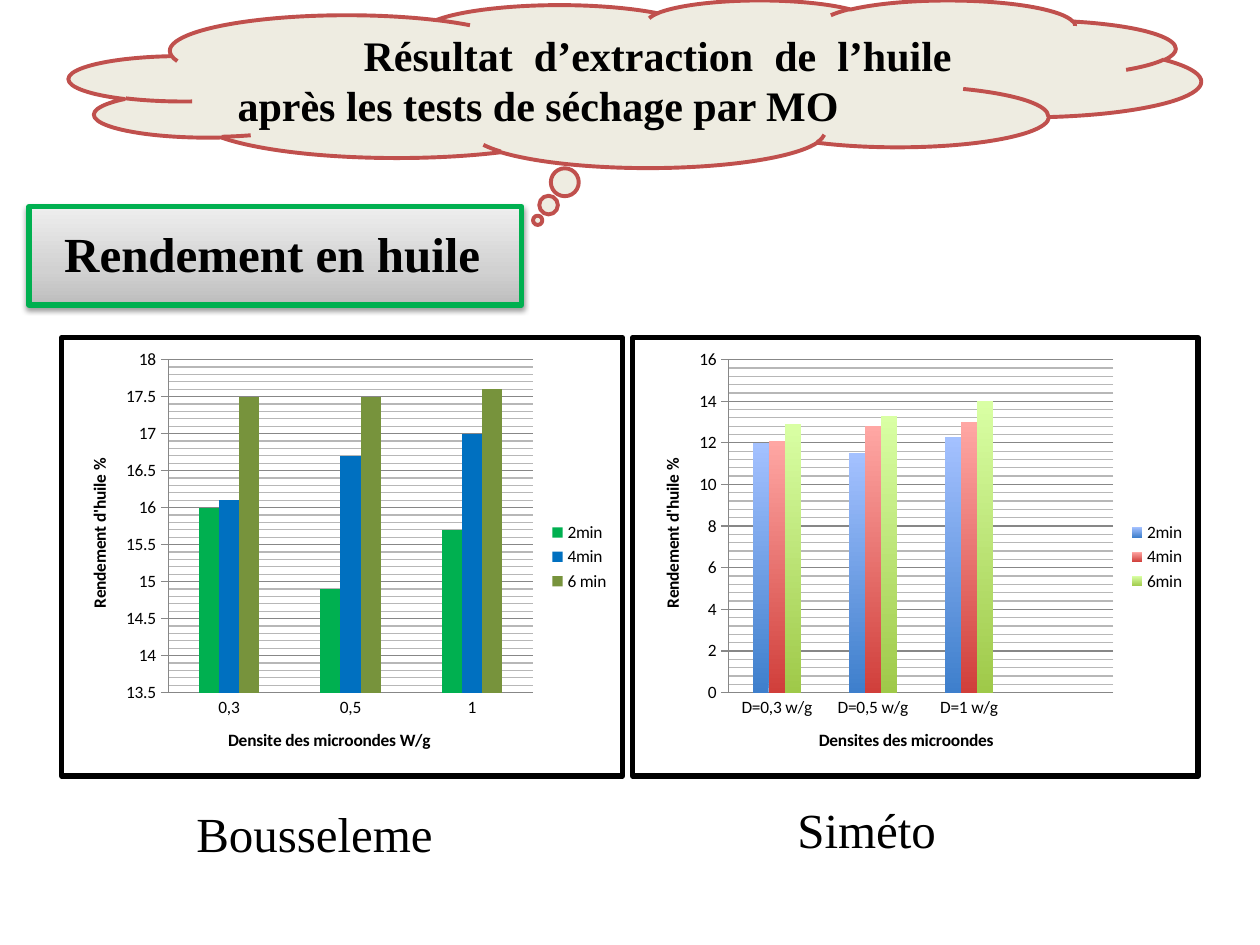
from lxml.etree import SubElement
from pptx import Presentation
from pptx.chart.data import CategoryChartData
from pptx.dml.color import RGBColor
from pptx.enum.chart import XL_CHART_TYPE, XL_LEGEND_POSITION, XL_TICK_MARK
from pptx.enum.shapes import MSO_SHAPE
from pptx.enum.text import MSO_ANCHOR, PP_ALIGN
from pptx.oxml import parse_xml
from pptx.oxml.ns import nsdecls, qn
from pptx.util import Inches, Pt

COLORS = {
    "text": "000000", "cloud": "EEECE1", "cloud_line": "C0504D",
    "green": "00B050", "blue": "0070C0", "olive": "77933C",
    "dark": "BDBDBD", "mid": "D1D1D1", "light": "EEEEEE", "white": "FFFFFF",
}
SERIF = "Times New Roman"
SANS = "Calibri"


def rgb(name):
    return RGBColor.from_string(COLORS[name])


def box(x, y, w, h):
    return [Inches(v) for v in (x, y, w, h)]


def write(tf, text, size, bold=False, align=PP_ALIGN.LEFT, wrap=False):
    tf.word_wrap = wrap
    p = tf.paragraphs[0]
    p.alignment = align
    r = p.add_run()
    r.text = text
    for name, value in {"name": SERIF, "size": Pt(size), "bold": bold}.items():
        setattr(r.font, name, value)
    r.font.color.rgb = rgb("text")
    return p


def add_outlined(s, kind, place, line, width):
    sp = s.shapes.add_shape(kind, *box(*place))
    sp.shadow.inherit = False
    sp.line.color.rgb = rgb(line)
    sp.line.width = Pt(width)
    return sp


def add_cloud(s, text):
    sp = add_outlined(s, MSO_SHAPE.CLOUD_CALLOUT, (0.55, 0, 8.98, 1.33),
                      "cloud_line", 2.25)
    sp.adjustments[0], sp.adjustments[1] = -0.086, 0.815
    sp.fill.solid()
    sp.fill.fore_color.rgb = rgb("cloud")
    sp.text_frame.vertical_anchor = MSO_ANCHOR.MIDDLE
    p = write(sp.text_frame, text, 24, True, PP_ALIGN.JUSTIFY, True)
    p._p.get_or_add_pPr().set("indent", str(Inches(1)))


def add_heading_panel(s):
    """Green-framed panel with a three-stop grey gradient and a soft shadow."""
    sp = add_outlined(s, MSO_SHAPE.RECTANGLE, (0.23, 1.64, 3.91, 0.78), "green", 3)
    sp.fill.gradient()
    grad = sp._element.spPr.find(qn("a:gradFill"))
    stops = "".join(
        f'<a:gs pos="{pos * 1000}"><a:srgbClr val="{COLORS[c]}"/></a:gs>'
        for pos, c in ((0, "dark"), (35, "mid"), (100, "light")))
    grad.getparent().replace(grad, parse_xml(
        f'<a:gradFill {nsdecls("a")} rotWithShape="1"><a:gsLst>{stops}</a:gsLst>'
        '<a:lin ang="16200000" scaled="0"/></a:gradFill>'))
    effects = sp._element.spPr.find(qn("a:effectLst"))
    shadow = SubElement(effects, qn("a:outerShdw"), blurRad=str(Pt(3.1)),
                        dist=str(Pt(1.6)), dir="5400000", rotWithShape="0")
    color = SubElement(shadow, qn("a:srgbClr"), val=COLORS["text"])
    SubElement(color, qn("a:alpha"), val="38000")


def set_title(s, text):
    title = s.shapes.title
    title.left, title.top, title.width, title.height = box(0.41, 1.72, 3.54, 0.57)
    title.text_frame.vertical_anchor = MSO_ANCHOR.MIDDLE
    write(title.text_frame, text, 28, True)
    s.shapes._spTree.append(title._element)  # in front of its panel


def add_caption(s, text, place):
    write(s.shapes.add_textbox(*box(*place)).text_frame, text, 28)


def set_axis_title(axis, text):
    tf = axis.axis_title.text_frame
    tf.text = text
    font = tf.paragraphs[0].runs[0].font
    for name, value in {"name": SANS, "size": Pt(10), "bold": True}.items():
        setattr(font, name, value)
    font.color.rgb = rgb("text")


def frame_chart(chart, plot):
    """White area with a black border; plot is x, y, w, h as fractions."""
    chart._chartSpace.find(qn("c:chart")).addnext(parse_xml(
        f'<c:spPr {nsdecls("c", "a")}><a:solidFill><a:srgbClr val="{COLORS["white"]}"/>'
        f'</a:solidFill><a:ln w="{Pt(3)}"><a:solidFill>'
        f'<a:srgbClr val="{COLORS["text"]}"/></a:solidFill></a:ln></c:spPr>'))
    area = chart._chartSpace.find(".//" + qn("c:plotArea"))
    for old in area.findall(qn("c:layout")):
        area.remove(old)
    sizes = "".join(f'<c:{k} val="{v}"/>' for k, v in zip("xywh", plot))
    area.insert(0, parse_xml(
        f'<c:layout {nsdecls("c")}><c:manualLayout><c:layoutTarget val="inner"/>'
        '<c:xMode val="edge"/><c:yMode val="edge"/>'
        f'{sizes}</c:manualLayout></c:layout>'))


def add_yield_chart(s, place, cats, series, x_title, plot, scale, colors=()):
    """Without colors the bars take the theme's shaded accents."""
    data = CategoryChartData()
    data.categories = cats
    for name, values in series.items():
        data.add_series(name, values)
    chart = s.shapes.add_chart(XL_CHART_TYPE.COLUMN_CLUSTERED, *box(*place), data).chart
    chart.has_title = False
    chart.font.name, chart.font.size = SANS, Pt(10)
    chart.font.color.rgb = rgb("text")
    chart.has_legend = True
    chart.legend.position = XL_LEGEND_POSITION.RIGHT
    chart.legend.include_in_layout = False
    bars = chart.plots[0]
    bars.gap_width, bars.overlap, bars.vary_by_categories = 300, 0, False
    if not colors:
        chart.chart_style = 26
    for ser, color in zip(bars.series, colors):
        ser.format.fill.solid()
        ser.format.fill.fore_color.rgb = rgb(color)
    x_axis, y_axis = chart.category_axis, chart.value_axis
    x_axis.major_tick_mark = XL_TICK_MARK.NONE
    y_axis.major_tick_mark = XL_TICK_MARK.CROSS
    y_axis.has_major_gridlines = y_axis.has_minor_gridlines = True
    y_axis.minimum_scale, y_axis.maximum_scale, y_axis.major_unit = scale
    y_axis.minor_unit = y_axis.major_unit / 5
    set_axis_title(x_axis, x_title)
    set_axis_title(y_axis, "Rendement d'huile %")
    frame_chart(chart, plot)


def main():
    prs = Presentation()
    prs.slide_width, prs.slide_height = Inches(10), Inches(7.5)
    s = prs.slides.add_slide(prs.slide_layouts[5])
    add_cloud(s, "Résultat d’extraction de l’huile après les tests de séchage par MO")
    add_heading_panel(s)
    set_title(s, "Rendement en huile")
    add_caption(s, "Bousseleme", (1.46, 6.33, 2.1, 0.57))
    add_caption(s, "Siméto", (6.23, 6.3, 1.42, 0.57))
    add_yield_chart(
        s, (0.47, 2.66, 4.49, 3.52), ["0,3", "0,5", "1"],
        {"2min": [16, 14.9, 15.7], "4min": [16.1, 16.7, 17], "6 min": [17.5, 17.5, 17.6]},
        "Densite des microondes W/g", (0.19, 0.05, 0.65, 0.76), (13.5, 18, 0.5),
        ("green", "blue", "olive"))
    add_yield_chart(
        s, (5, 2.66, 4.53, 3.52), ["D=0,3 w/g", "D=0,5 w/g", "D=1 w/g", ""],
        {"2min": [12, 11.5, 12.3, None], "4min": [12.1, 12.8, 13, None],
         "6min": [12.9, 13.3, 14, None]},
        "Densites des microondes", (0.17, 0.05, 0.68, 0.76), (0, 16, 2))
    prs.save("out.pptx")


if __name__ == "__main__":
    main()
